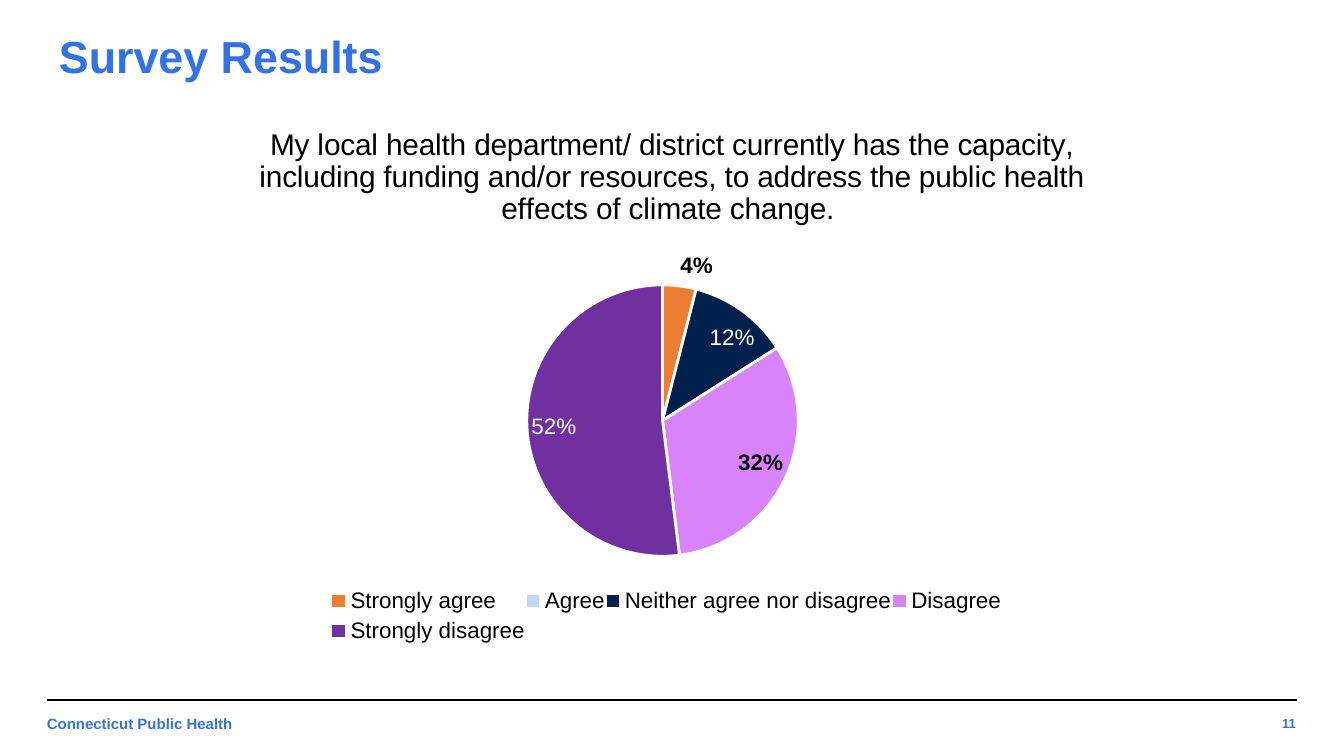
from lxml import etree
from pptx import Presentation
from pptx.chart.data import CategoryChartData
from pptx.dml.color import RGBColor
from pptx.enum.chart import XL_CHART_TYPE, XL_LABEL_POSITION, XL_LEGEND_POSITION
from pptx.enum.text import MSO_ANCHOR, PP_ALIGN
from pptx.oxml.ns import qn
from pptx.util import Inches, Pt

BEST_FIT = XL_LABEL_POSITION.BEST_FIT
LEFT, RIGHT = PP_ALIGN.LEFT, PP_ALIGN.RIGHT
TOP, MIDDLE = MSO_ANCHOR.TOP, MSO_ANCHOR.MIDDLE

FONT = "Arial"
BLUE, BLACK, WHITE = "3371E7", "000000", "FFFFFF"
PERCENT = "0%;;"  # zero stays unlabelled

# Text, box, size, alignment, anchor
TEXTS = [
    ("Survey Results", (0.34, 0.25, 9.32, 0.33), 24, LEFT, MIDDLE),
    ("Connecticut Public Health", (0.25, 5.25, 3.28, 0.34), 8, LEFT, TOP),
    ("11", (9.14, 5.26, 0.6, 0.25), 7, RIGHT, MIDDLE),
]
QUESTION = ("My local health department/ district currently has the capacity, "
            "including funding and/or resources, to address the public health "
            "effects of climate change. ")
# Answer, share, slice colour, label colour, bold label
ANSWERS = [
    ("Strongly agree", 0.04, "ED7D31", BLACK, True),
    ("Agree", 0, "C6D4FB", BLACK, True),
    ("Neither agree nor disagree", 0.12, "00214D", WHITE, False),
    ("Disagree", 0.32, "D883FC", BLACK, True),
    ("Strongly disagree", 0.52, "7030A0", WHITE, False),
]
CHART_BOX = (0.83, 0.76, 8.34, 4.07)
# Left, top, width, height on the slide
PIE_BOX = (3.92, 2.12, 2.02, 2.02)
LEGEND_BOX = (2.46, 4.34, 5.0, 0.49)
QUESTION_CORNER = (1.89, 0.89)


def color(value):
    return RGBColor.from_string(value)


def style_font(font, size, value, bold):
    font.name, font.size, font.bold = FONT, Pt(size), bold
    font.color.rgb = color(value)


def set_layout(element, box, after=None):
    """Place a chart part, given in slide inches, as shares of the chart."""
    for old in element.findall(qn("c:layout")):
        element.remove(old)
    layout = etree.Element(qn("c:layout"))
    manual = etree.SubElement(layout, qn("c:manualLayout"))
    if after is None:
        etree.SubElement(manual, qn("c:layoutTarget")).set("val", "inner")
    for key in "xy":
        etree.SubElement(manual, qn(f"c:{key}Mode")).set("val", "edge")
    left, top, width, height = CHART_BOX
    starts, spans = (left, top, 0, 0), (width, height, width, height)
    for key, value, start, span in zip("xywh", box, starts, spans):
        share = (value - start) / span
        etree.SubElement(manual, qn(f"c:{key}")).set("val", f"{share:.4f}")
    if after is None:
        element.insert(0, layout)
    else:
        element.find(qn(after)).addnext(layout)


presentation = Presentation()
presentation.slide_width = Inches(10)
presentation.slide_height = Inches(10 * 9 / 16)
slide = presentation.slides.add_slide(presentation.slide_layouts[6])

# Title and footer
for text, box, size, alignment, anchor in TEXTS:
    frame = slide.shapes.add_textbox(*map(Inches, box)).text_frame
    frame.word_wrap = True
    frame.vertical_anchor = anchor
    frame.margin_left = frame.margin_right = Inches(0.1)
    frame.margin_top = frame.margin_bottom = Inches(0.1)
    paragraph = frame.paragraphs[0]
    paragraph.text, paragraph.alignment = text, alignment
    style_font(paragraph.font, size, BLUE, True)

# Footer rule
rule = slide.shapes.add_connector(
    1, Inches(9.65), Inches(5.21), Inches(0.35), Inches(5.21))
rule.line.color.rgb, rule.line.width = color(BLACK), Pt(0.75)
etree.SubElement(rule.element.spPr, qn("a:effectLst"))

# Pie chart
chart_data = CategoryChartData(number_format=PERCENT)
chart_data.categories = [answer[0] for answer in ANSWERS]
chart_data.add_series("Series 1", [answer[1] for answer in ANSWERS])
chart = slide.shapes.add_chart(
    XL_CHART_TYPE.PIE, *map(Inches, CHART_BOX), chart_data).chart
style_font(chart.font, 10, BLACK, False)

paragraph = chart.chart_title.text_frame.paragraphs[0]
paragraph.text = QUESTION
style_font(paragraph.font, 16, BLACK, False)
chart.chart_title.include_in_layout = False

chart.has_legend = True
chart.legend.position = XL_LEGEND_POSITION.BOTTOM
chart.legend.include_in_layout = False
style_font(chart.legend.font, 12, BLACK, False)

# Slices and their labels
plot = chart.plots[0]
plot.vary_by_categories = True
series = plot.series[0]
labels = series.data_labels
labels.show_value = True
labels.number_format, labels.number_format_is_linked = PERCENT, False
labels.position = BEST_FIT
style_font(labels.font, 12, BLACK, True)
for index, (_, _, fill, label_color, bold) in enumerate(ANSWERS):
    point = series.points[index]
    point.format.fill.solid()
    point.format.fill.fore_color.rgb = color(fill)
    point.format.line.color.rgb = color(WHITE)
    point.format.line.width = Pt(1.5)
    style_font(point.data_label.font, 12, label_color, bold)
    point.data_label.position = BEST_FIT

# Places of the chart parts
chart_element = chart.element.find(qn("c:chart"))
set_layout(chart_element.find(qn("c:plotArea")), PIE_BOX)
set_layout(chart_element.find(qn("c:legend")), LEGEND_BOX, "c:legendPos")
set_layout(chart_element.find(qn("c:title")), QUESTION_CORNER, "c:tx")

presentation.save("out.pptx")
